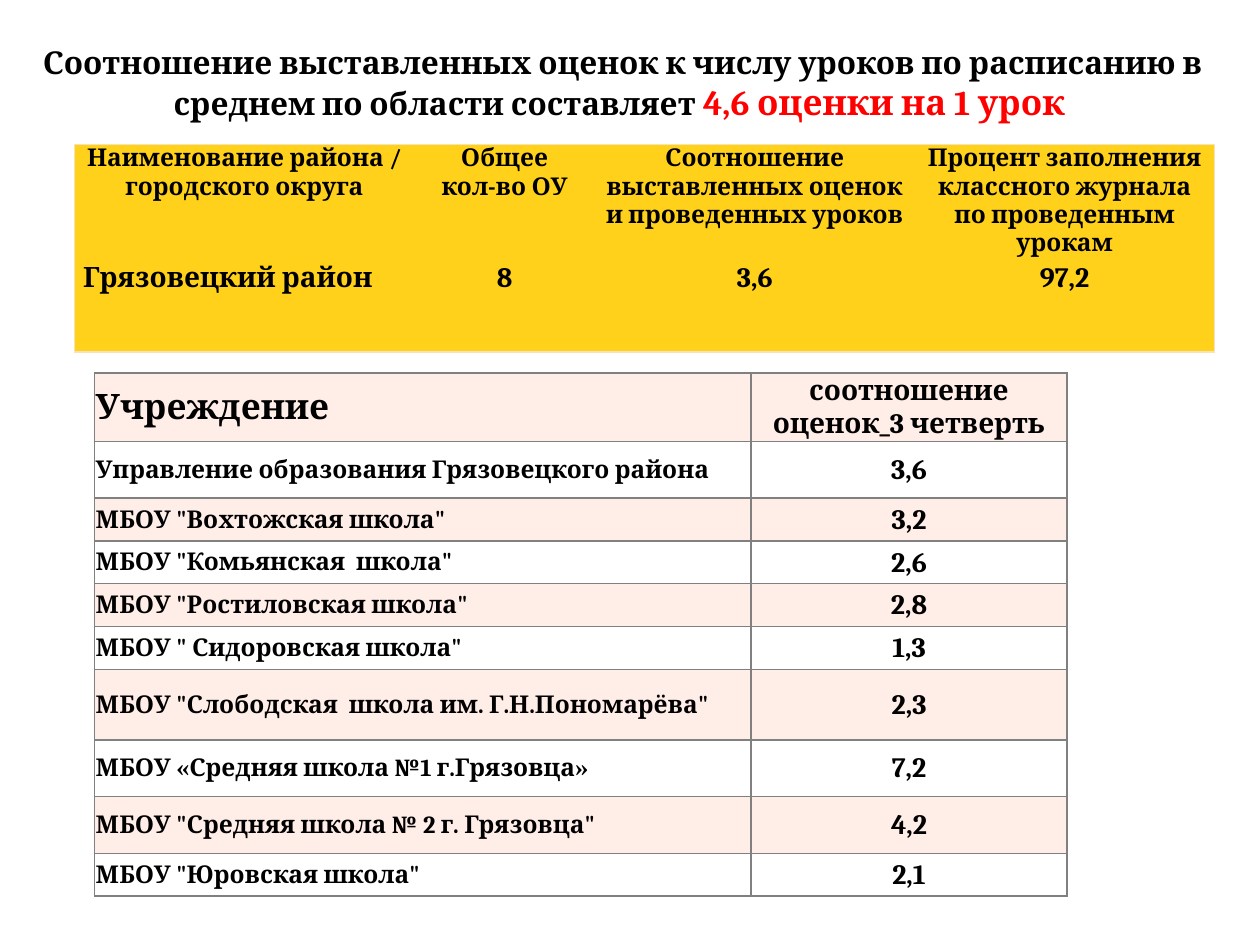
import dataclasses

import pptx
import pptx.dml.color
import pptx.enum.text
import pptx.oxml
import pptx.oxml.ns
import pptx.util

Align = pptx.enum.text.PP_ALIGN
Anchor = pptx.enum.text.MSO_ANCHOR
COLUMNS, ROWS = 100, 75
SLIDE_WIDTH, SLIDE_HEIGHT = pptx.util.Inches(10), pptx.util.Inches(7.5)


@dataclasses.dataclass(frozen=True)
class Theme:
    font: str = "Cambria"
    ink: str = "000000"
    accent: str = "FF0000"
    gold: str = "FFD11A"
    gold_edge: str = "F6E3B8"
    rose: str = "FFEDE8"
    white: str = "FFFFFF"
    grey: str = "808080"
    large: int = 20
    heading: int = 18
    medium: int = 16
    small: int = 14


@dataclasses.dataclass(frozen=True)
class Box:
    left: float
    top: float
    width: float
    height: float

    def place(self):
        return across(self.left), down(self.top), across(self.width), down(self.height)


THEME = Theme()
DISTRICT = [
    ["Наименование района / городского округа", "Общее\nкол-во ОУ",
     "Соотношение выставленных оценок и проведенных уроков",
     "Процент заполнения классного журнала по проведенным урокам"],
    ["Грязовецкий район", "8", "3,6", "97,2"],
]
SCHOOLS = [
    ("Учреждение", "соотношение оценок_3 четверть", 4.5),
    ("Управление образования Грязовецкого района", "3,6", 4.5),
    ('МБОУ "Вохтожская школа"', "3,2", 3.4),
    ('МБОУ "Комьянская  школа"', "2,6", 3.4),
    ('МБОУ "Ростиловская школа"', "2,8", 3.4),
    ('МБОУ " Сидоровская школа"', "1,3", 3.4),
    ('МБОУ "Слободская  школа им. Г.Н.Пономарёва"', "2,3", 5.6),
    ("МБОУ «Средняя школа №1 г.Грязовца»", "7,2", 4.5),
    ('МБОУ "Средняя школа № 2 г. Грязовца"', "4,2", 4.5),
    ('МБОУ "Юровская школа"', "2,1", 3.4),
]


def across(columns):
    return round(SLIDE_WIDTH * columns / COLUMNS)


def down(rows):
    return round(SLIDE_HEIGHT * rows / ROWS)


def apply(target, values):
    for name, value in values.items():
        setattr(target, name, value)


def add_span(para, text, size, color):
    span = para.add_run()
    span.text = text
    apply(span.font, {"name": THEME.font, "size": pptx.util.Pt(size), "bold": True})
    span.font.color.rgb = pptx.dml.color.RGBColor.from_string(color)


def add_border(cell, side, color, points):
    line = pptx.oxml.parse_xml(
        f'<a:ln{side} {pptx.oxml.ns.nsdecls("a")} w="{pptx.util.Pt(points)}">'
        + (f'<a:solidFill><a:srgbClr val="{color}"/></a:solidFill>' if color else "<a:noFill/>")
        + f"</a:ln{side}>")
    cell._tc.get_or_add_tcPr().append(line)


def fill_cell(cell, text, size, align, fill, borders, layout):
    for side, (color, points) in borders.items():
        add_border(cell, side, color, points)
    cell.fill.solid()
    cell.fill.fore_color.rgb = pptx.dml.color.RGBColor.from_string(fill)
    apply(cell, layout)
    for index, line in enumerate(text.split("\n")):
        frame = cell.text_frame
        para = frame.add_paragraph() if index else frame.paragraphs[0]
        para.alignment = align
        add_span(para, line, size, THEME.ink)


def add_grid(page, box, widths, heights):
    table = page.shapes.add_table(len(heights), len(widths), *box.place()).table
    apply(table, {"first_row": False, "horz_banding": False})
    for column, width in zip(table.columns, widths):
        column.width = across(width)
    for row, height in zip(table.rows, heights):
        row.height = down(height)
    return table


def add_title(page, box):
    frame = page.shapes.add_textbox(*box.place()).text_frame
    apply(frame, {"word_wrap": True,
                  "auto_size": pptx.enum.text.MSO_AUTO_SIZE.SHAPE_TO_FIT_TEXT})
    para = frame.paragraphs[0]
    para.alignment = Align.CENTER
    add_span(para, "Соотношение выставленных оценок к числу уроков по расписанию "
             "в среднем по области составляет ", THEME.heading, THEME.ink)
    add_span(para, "4,6 оценки на 1 урок ", THEME.large, THEME.accent)


def add_district_table(page, box):
    table = add_grid(page, box, [27, 14.3, 25.4, 23.8], [box.height / 2] * 2)
    layout = {"margin_left": across(0.7), "margin_right": across(0.7),
              "margin_top": 0, "margin_bottom": 0}
    for r, texts in enumerate(DISTRICT):
        for c, text in enumerate(texts):
            outer = {"L": c == 0, "R": c == len(texts) - 1,
                     "T": r == 0, "B": r == len(DISTRICT) - 1}
            borders = {side: (THEME.gold_edge if edge else None, 0.75)
                       for side, edge in outer.items()}
            fill_cell(table.cell(r, c), text, THEME.medium if r else THEME.small,
                      Align.LEFT if r and c == 0 else Align.CENTER,
                      THEME.gold, borders, layout)


def add_school_table(page, box):
    table = add_grid(page, box, [52.1, 25.1], [height for _, _, height in SCHOOLS])
    layout = {"margin_left": across(0.1), "margin_right": across(0.1),
              "margin_top": down(0.1), "margin_bottom": 0,
              "vertical_anchor": Anchor.MIDDLE}
    borders = {side: (THEME.grey, 1) for side in "LRTB"}
    for r, (school, ratio, _) in enumerate(SCHOOLS):
        fill = THEME.white if r % 2 else THEME.rose
        fill_cell(table.cell(r, 0), school, THEME.small if r else THEME.large,
                  Align.LEFT, fill, borders, layout)
        fill_cell(table.cell(r, 1), ratio, THEME.medium,
                  Align.CENTER, fill, borders, layout)


def main():
    deck = pptx.Presentation()
    apply(deck, {"slide_width": SLIDE_WIDTH, "slide_height": SLIDE_HEIGHT})
    page = deck.slides.add_slide(deck.slide_layouts[6])
    add_title(page, Box(2.4, 2.9, 94.1, 7.4))
    add_district_table(page, Box(5.9, 11.5, 90.5, 14.2))
    add_school_table(page, Box(7.5, 29.6, 77.2, 41.1))
    deck.save("out.pptx")


if __name__ == "__main__":
    main()
